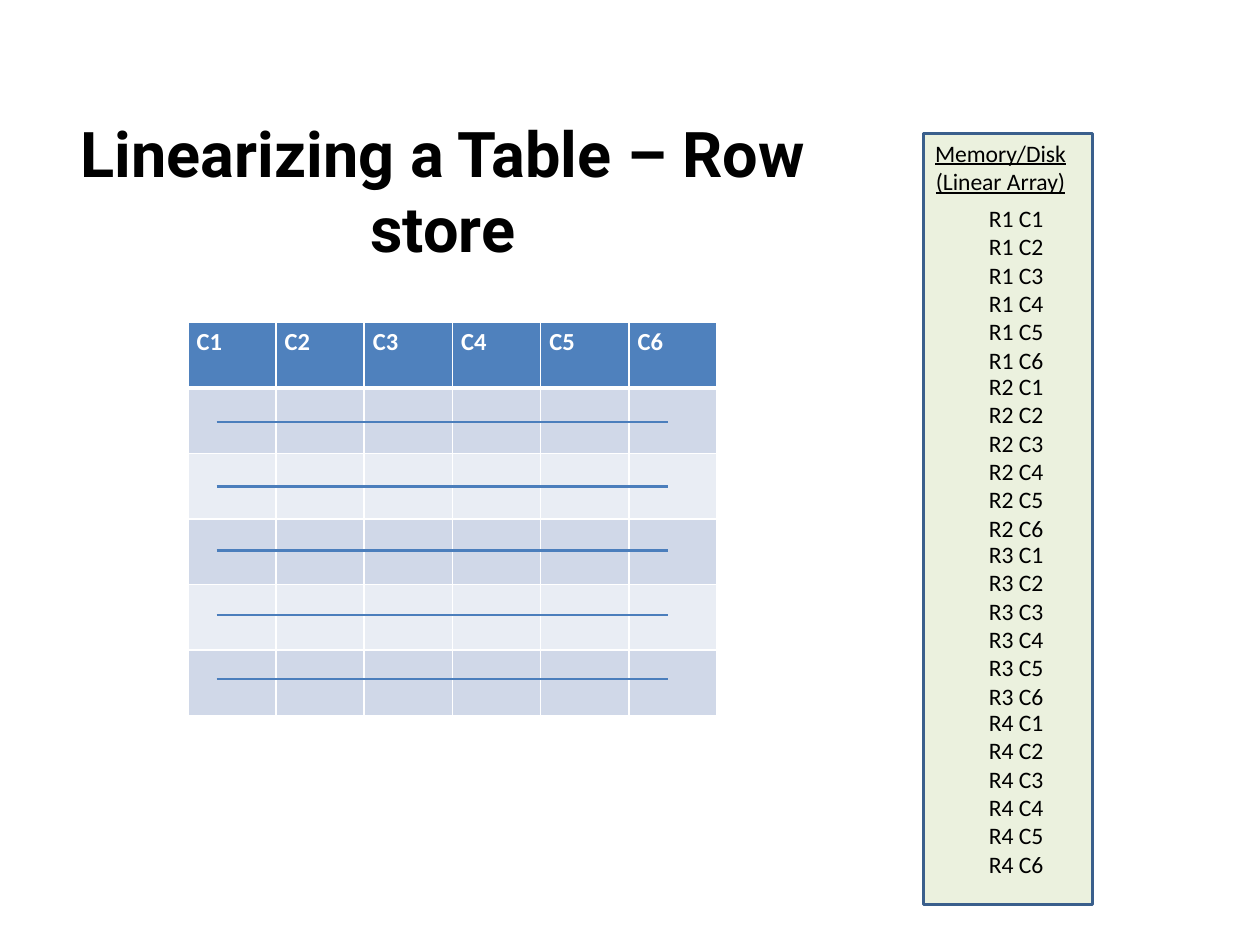
from lxml import etree
from pptx import Presentation
from pptx.dml.color import RGBColor
from pptx.enum.shapes import MSO_CONNECTOR, MSO_SHAPE
from pptx.enum.text import MSO_ANCHOR, PP_ALIGN
from pptx.oxml.ns import qn
from pptx.util import Inches, Pt

COLUMNS = 6
BODY_ROWS = 5
CELL_W, CELL_H = 0.7, 0.52


def rgb(color):
    return RGBColor.from_string(color)


def style_font(font, size, name="Calibri", color="000000", bold=False, underline=False):
    font.size = Pt(size)
    font.name = name
    font.color.rgb = rgb(color)
    font.bold = bold
    font.underline = underline


def add_text(slide, box, lines, size, align=PP_ALIGN.LEFT, anchor=MSO_ANCHOR.TOP, **font):
    tf = slide.shapes.add_textbox(*map(Inches, box)).text_frame
    tf.word_wrap = True
    tf.vertical_anchor = anchor
    tf.text = "\n".join(lines)
    for p in tf.paragraphs:
        p.alignment = align
        for r in p.runs:
            style_font(r.font, size, **font)


def add_panel(slide, box, fill, line, width):
    s = slide.shapes.add_shape(MSO_SHAPE.RECTANGLE, *map(Inches, box))
    s.shadow.inherit = False
    s.fill.solid()
    s.fill.fore_color.rgb = rgb(fill)
    s.line.color.rgb = rgb(line)
    s.line.width = Pt(width)


def add_line(slide, x1, x2, y, color, width):
    c = slide.shapes.add_connector(MSO_CONNECTOR.STRAIGHT, *map(Inches, (x1, y, x2, y)))
    c.line.color.rgb = rgb(color)
    c.line.width = Pt(width)
    etree.SubElement(c._element.spPr, qn("a:effectLst"))


def set_borders(cell, color, widths):
    tc_pr = cell._tc.get_or_add_tcPr()
    for side, width in widths.items():
        ln = etree.SubElement(tc_pr, qn(f"a:ln{side}"), w=str(Pt(width)))
        fill = etree.SubElement(ln, qn("a:solidFill"))
        etree.SubElement(fill, qn("a:srgbClr"), val=color)


def add_grid(slide, left, top):
    rows = BODY_ROWS + 1
    box = (left, top, COLUMNS * CELL_W, rows * CELL_H)
    table = slide.shapes.add_table(rows, COLUMNS, *map(Inches, box)).table
    for column in table.columns:
        column.width = Inches(CELL_W)
    for i, row in enumerate(table.rows):
        row.height = Inches(CELL_H)
        for j, cell in enumerate(row.cells):
            cell.margin_left = cell.margin_right = Inches(0.07)
            cell.margin_top = cell.margin_bottom = Inches(0.04)
            # The rule under the header is thicker than the others
            set_borders(cell, "FFFFFF", {"L": 1, "R": 1,
                                         "T": 3 if i == 1 else 1,
                                         "B": 3 if i == 0 else 1})
            cell.fill.solid()
            if i == 0:
                cell.fill.fore_color.rgb = rgb("4F81BD")
                cell.text_frame.text = f"C{j + 1}"
                r = cell.text_frame.paragraphs[0].runs[0]
                style_font(r.font, 14, color="FFFFFF", bold=True)
            else:
                cell.fill.fore_color.rgb = rgb("D0D8E8" if i % 2 else "E9EDF4")


def main():
    prs = Presentation()
    prs.slide_width, prs.slide_height = Inches(10), Inches(7.5)
    slide = prs.slides.add_slide(prs.slide_layouts[6])

    # Memory panel and title
    add_panel(slide, (7.33, 1.06, 1.34, 6.12), "EBF1DE", "3A5F8C", 2)
    add_text(slide, (0.28, 0.96, 6.47, 1.09), ["Linearizing a Table – Row store"], 36,
             PP_ALIGN.CENTER, MSO_ANCHOR.MIDDLE, name="Roboto", bold=True)

    # Table with one stroke through each row
    add_grid(slide, 1.49, 2.56)
    for i in range(BODY_ROWS):
        add_line(slide, 1.72, 5.3, 3.35 + i * 0.51, "4B7EBC", 1.5)

    # Rows laid out one after another in memory
    for i in range(4):
        cells = [f"R{i + 1} C{j + 1}" for j in range(COLUMNS)]
        add_text(slide, (7.75, 1.57 + i * 1.333, 0.76, 1.46), cells, 13.5)
    add_text(slide, (7.1, 1.05, 1.68, 0.56), ["Memory/Disk (Linear Array)"], 13.5,
             PP_ALIGN.CENTER, underline=True)

    prs.save("out.pptx")


if __name__ == "__main__":
    main()
